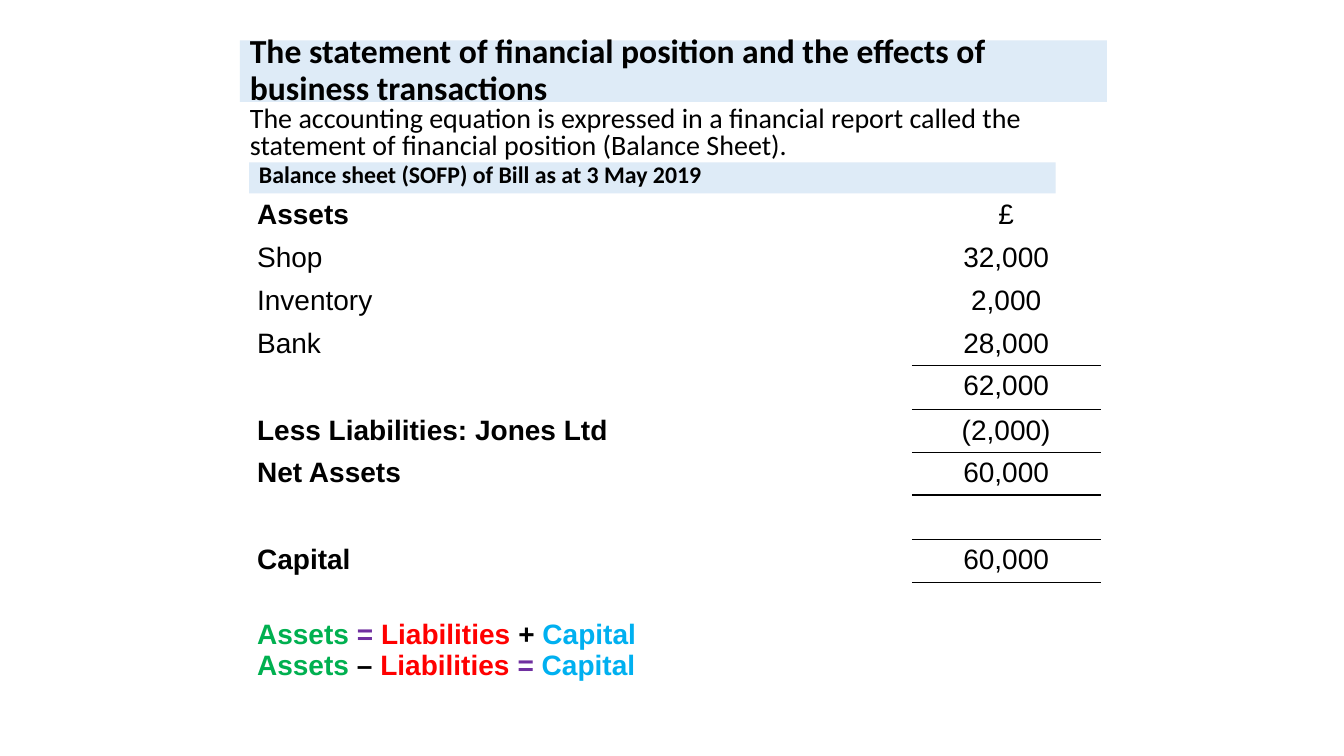
import pptx
import pptx.util
import pptx.dml.color
import pptx.enum.shapes
import pptx.enum.text
import pptx.oxml
import pptx.oxml.ns

Inches = pptx.util.Inches
Align = pptx.enum.text.PP_ALIGN
Anchor = pptx.enum.text.MSO_ANCHOR

COLORS = {
    "black": "000000",
    "band": "DEEBF7",
    "green": "00B050",
    "purple": "7030A0",
    "red": "FF0000",
    "blue": "00B0F0",
}

ROWS = [
    ("Assets", "£", 0.41),
    ("Shop", "32,000", 0.41),
    ("Inventory", "2,000", 0.41),
    ("Bank", "28,000", 0.41),
    ("", "62,000", 0.44),
    ("Less Liabilities: Jones Ltd", "(2,000)", 0.42),
    ("Net Assets", "60,000", 0.41),
    ("", "", 0.44),
    ("Capital", "60,000", 0.42),
    ("", "", 1.06),
    ("", "", 0.44),
]
HEADS = {"Assets", "Less Liabilities: Jones Ltd", "Net Assets", "Capital"}
RULED = range(3, 9)

SUMS = [
    [("Assets ", "green"), ("= ", "purple"), ("Liabilities ", "red"),
     ("+ ", "black"), ("Capital", "blue")],
    [("Assets ", "green"), ("– ", "black"), ("Liabilities ", "red"),
     ("= ", "purple"), ("Capital", "blue")],
]


class Deck:
    def __init__(self, colors):
        self.colors = colors
        self.file = pptx.Presentation()
        self.file.slide_width = Inches(13.33)
        self.file.slide_height = Inches(7.5)
        self.slide = self.file.slides.add_slide(self.file.slide_layouts[6])

    def tone(self, name):
        return pptx.dml.color.RGBColor.from_string(self.colors[name])

    def style(self, run, size, font, bold=False, color="black"):
        run.font.size = pptx.util.Pt(size)
        run.font.name = font
        run.font.bold = bold
        run.font.color.rgb = self.tone(color)

    def label(self, frame, text, size, font, bold, align, space=1.0):
        frame.word_wrap = True
        frame.text = text
        para = frame.paragraphs[0]
        para.alignment = align
        para.line_spacing = space
        for run in para.runs:
            self.style(run, size, font, bold)

    def band(self, box, text, size, space):
        shape = self.slide.shapes.add_shape(
            pptx.enum.shapes.MSO_SHAPE.RECTANGLE, *map(Inches, box))
        shape.shadow.inherit = False
        shape.fill.solid()
        shape.fill.fore_color.rgb = self.tone("band")
        shape.line.fill.background()
        shape.text_frame.vertical_anchor = Anchor.MIDDLE
        self.label(shape.text_frame, text, size, "Calibri", True, Align.LEFT, space)

    def note(self, box, text, size, space):
        shape = self.slide.shapes.add_textbox(*map(Inches, box))
        self.label(shape.text_frame, text, size, "Calibri", False, Align.LEFT, space)

    def rule(self, cell, side):
        props = cell._tc.get_or_add_tcPr()
        line = pptx.oxml.parse_xml(
            f'<a:{side} {pptx.oxml.ns.nsdecls("a")} w="12700"><a:solidFill>'
            f'<a:srgbClr val="{self.colors["black"]}"/></a:solidFill></a:{side}>')
        fill = props.find(pptx.oxml.ns.qn("a:noFill"))
        fill.addprevious(line)

    def table(self, spot, widths, rows):
        high = sum(row[2] for row in rows)
        frame = self.slide.shapes.add_table(
            len(rows), len(widths), *map(Inches, (*spot, sum(widths), high)))
        grid = frame.table
        grid.first_row = False
        grid.horz_banding = False
        for col, width in zip(grid.columns, widths):
            col.width = Inches(width)
        for i, (name, value, tall) in enumerate(rows):
            grid.rows[i].height = Inches(tall)
            for j, text in enumerate((name, value)):
                cell = grid.cell(i, j)
                cell.fill.background()
                cell.margin_left = cell.margin_right = Inches(0.09)
                cell.margin_top = Inches(0.05)
                cell.margin_bottom = Inches(0.04)
                self.label(cell.text_frame, text, 20, "Arial", text in HEADS,
                           Align.CENTER if j else Align.LEFT)
            if i - 1 in RULED:
                self.rule(grid.cell(i, 1), "lnT")
            if i in RULED:
                self.rule(grid.cell(i, 1), "lnB")
        return grid

    def sums(self, cell, lines):
        cell.margin_top = Inches(0.37)
        frame = cell.text_frame
        for i, parts in enumerate(lines):
            para = frame.add_paragraph() if i else frame.paragraphs[0]
            for text, color in parts:
                run = para.add_run()
                run.text = text
                self.style(run, 20, "Arial", True, color)


def main():
    deck = Deck(COLORS)
    deck.band((2.38, 0.4, 8.6, 0.61),
              "The statement of financial position and the effects of "
              "business transactions", 24, 0.9)
    deck.note((2.38, 1.01, 8.28, 0.66),
              "The accounting equation is expressed in a financial report called "
              "the statement of financial position (Balance Sheet).", 20, 0.8)
    grid = deck.table((2.46, 1.93), (6.59, 1.86), ROWS)
    deck.sums(grid.cell(9, 0), SUMS)
    deck.band((2.47, 1.61, 8, 0.31),
              "Balance sheet (SOFP) of Bill as at 3 May 2019", 17, 0.7)
    deck.file.save("out.pptx")


if __name__ == "__main__":
    main()
